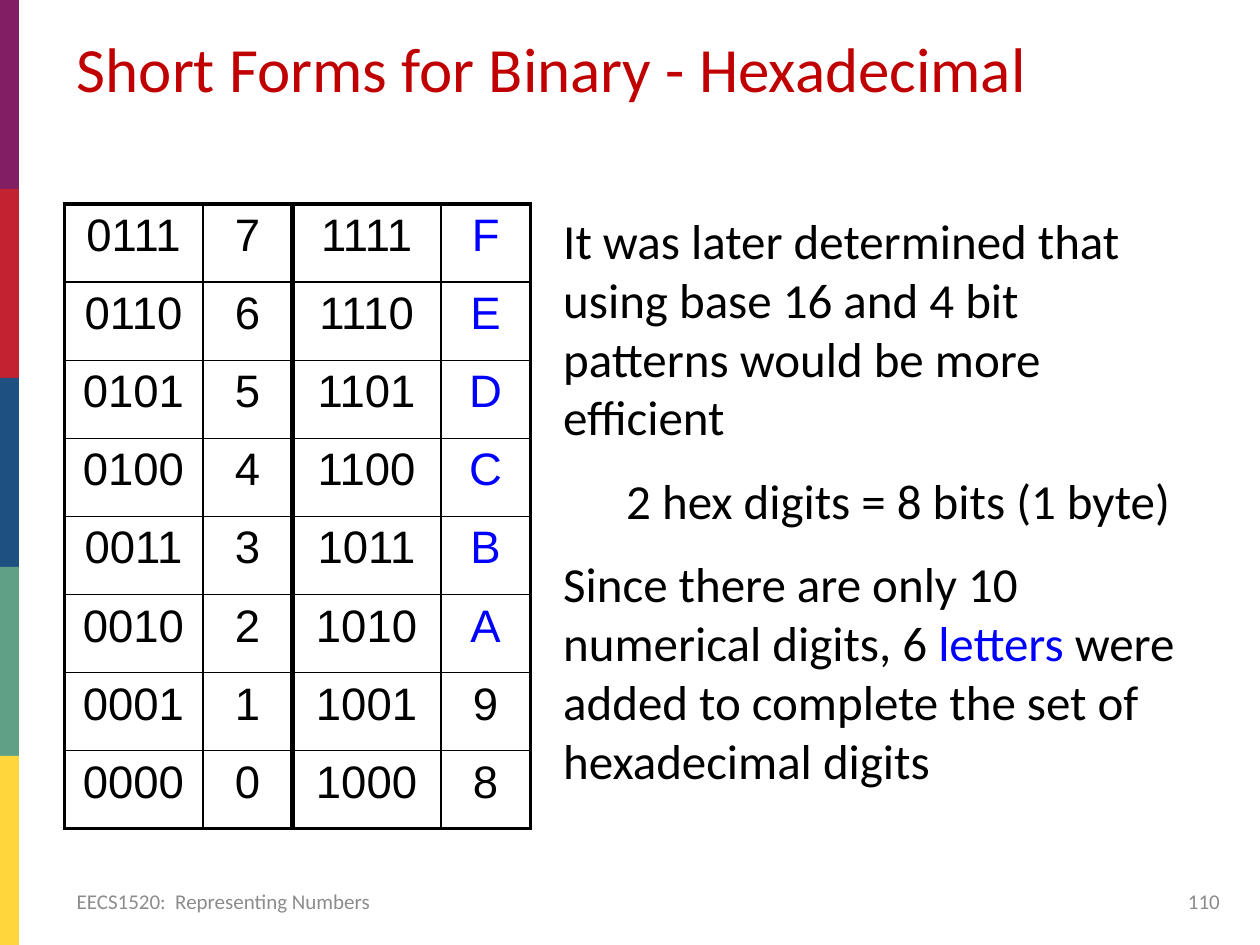
from pptx import Presentation
from pptx.dml.color import RGBColor
from pptx.enum.shapes import MSO_SHAPE
from pptx.enum.text import MSO_ANCHOR, MSO_AUTO_SIZE, PP_ALIGN
from pptx.oxml.xmlchemy import OxmlElement
from pptx.util import Inches, Pt

BLACK = RGBColor(0x00, 0x00, 0x00)
BLUE = RGBColor(0x00, 0x00, 0xFF)
RED = RGBColor(0xC0, 0x00, 0x00)
GRAY = RGBColor(0x8C, 0x8C, 0x8C)
BAND_COLORS = [
    RGBColor(0x82, 0x1E, 0x64),
    RGBColor(0xC3, 0x23, 0x30),
    RGBColor(0x1E, 0x50, 0x82),
    RGBColor(0x5F, 0xA0, 0x87),
    RGBColor(0xFF, 0xD7, 0x3C),
]

TITLE = "Short Forms for Binary - Hexadecimal"
# Each paragraph: indent in inches, space before in points, (text, colour) runs
BODY = [
    (0, 0, [("It was later determined that using base 16 and 4 bit patterns "
             "would be more efficient", BLACK)]),
    (0.5, 14, [("2 hex digits = 8 bits (1 byte)", BLACK)]),
    (0, 14, [("Since there are only 10 numerical digits, 6 ", BLACK),
             ("letters", BLUE),
             (" were added to complete the set of hexadecimal digits", BLACK)]),
]
FOOTERS = [
    ("EECS1520:  Representing Numbers", 0.51, 4.94, PP_ALIGN.LEFT),
    ("110", 7.53, 2.25, PP_ALIGN.RIGHT),
]
HEX_ROWS = [(f"{n:04b}", f"{n:X}", f"{n + 8:04b}", f"{n + 8:X}")
            for n in range(7, -1, -1)]
COL_WIDTHS = [1.1, 0.71, 1.18, 0.71]
ROW_HEIGHT = 0.62
# Line widths in points, from the first edge to the last
COL_LINES = [2.25, 1, 3, 1, 2.25]
ROW_LINES = [2.25] + [1] * 7 + [2.25]


def place(s, left, top, width, height):
    s.left, s.top = Inches(left), Inches(top)
    s.width, s.height = Inches(width), Inches(height)


def style(r, size, color, name="Calibri"):
    r.font.size, r.font.name = Pt(size), name
    r.font.color.rgb = color


def set_borders(cell, widths):
    """Draw black cell borders; widths are left, right, top, bottom in points."""
    tc_pr = cell._tc.get_or_add_tcPr()
    for i, (tag, width) in enumerate(zip(("lnL", "lnR", "lnT", "lnB"), widths)):
        ln = OxmlElement(f"a:{tag}")
        ln.set("w", str(Pt(width)))
        fill = OxmlElement("a:solidFill")
        color = OxmlElement("a:srgbClr")
        color.set("val", str(BLACK))
        fill.append(color)
        ln.append(fill)
        tc_pr.insert(i, ln)


def add_bands(slide):
    height = 7.5 / len(BAND_COLORS)
    for i, color in enumerate(BAND_COLORS):
        s = slide.shapes.add_shape(MSO_SHAPE.RECTANGLE, 0, Inches(i * height),
                                   Inches(0.15), Inches(height))
        s.shadow.inherit = False
        s.fill.solid()
        s.fill.fore_color.rgb = color
        s.line.fill.background()


def fill_title(title):
    place(title, 0.51, 0.25, 9.27, 1.01)
    tf = title.text_frame
    tf.text = TITLE
    tf.vertical_anchor = MSO_ANCHOR.TOP
    p = tf.paragraphs[0]
    p.alignment, p.line_spacing = PP_ALIGN.LEFT, 0.9
    style(p.runs[0], 36, RED)


def fill_body(body):
    place(body, 4.37, 1.62, 5.12, 4.81)
    tf = body.text_frame
    tf.auto_size = MSO_AUTO_SIZE.NONE
    for i, (indent, before, runs) in enumerate(BODY):
        p = tf.add_paragraph() if i else tf.paragraphs[0]
        p.level = 1 if indent else 0
        p.space_before = Pt(before)
        p_pr = p._p.get_or_add_pPr()
        p_pr.set("marL", str(Inches(indent)))
        p_pr.set("indent", "0")
        p_pr.append(OxmlElement("a:buNone"))
        for text, color in runs:
            r = p.add_run()
            r.text = text
            style(r, 28, color)


def add_hex_table(slide):
    table = slide.shapes.add_table(
        len(HEX_ROWS), len(COL_WIDTHS), Inches(0.51), Inches(1.62),
        Inches(sum(COL_WIDTHS)), Inches(ROW_HEIGHT * len(HEX_ROWS))).table
    table.first_row = table.horz_banding = False
    for col, width in zip(table.columns, COL_WIDTHS):
        col.width = Inches(width)
    for i, values in enumerate(HEX_ROWS):
        table.rows[i].height = Inches(ROW_HEIGHT)
        for j, value in enumerate(values):
            cell = table.cell(i, j)
            cell.fill.background()
            set_borders(cell, COL_LINES[j:j + 2] + ROW_LINES[i:i + 2])
            cell.text_frame.text = value
            p = cell.text_frame.paragraphs[0]
            p.alignment = PP_ALIGN.CENTER
            style(p.runs[0], 26, BLUE if value.isalpha() else BLACK, "Arial")


def add_footers(slide):
    for text, left, width, align in FOOTERS:
        tf = slide.shapes.add_textbox(Inches(left), Inches(6.95), Inches(width),
                                      Inches(0.4)).text_frame
        tf.word_wrap = True
        tf.vertical_anchor = MSO_ANCHOR.MIDDLE
        tf.text = text
        p = tf.paragraphs[0]
        p.alignment = align
        style(p.runs[0], 12, GRAY)


def main():
    prs = Presentation()
    prs.slide_width, prs.slide_height = Inches(10), Inches(7.5)
    slide = prs.slides.add_slide(prs.slide_layouts[1])
    add_bands(slide)
    fill_title(slide.shapes.title)
    add_hex_table(slide)
    fill_body(slide.placeholders[1])
    add_footers(slide)
    prs.save("out.pptx")


if __name__ == "__main__":
    main()
